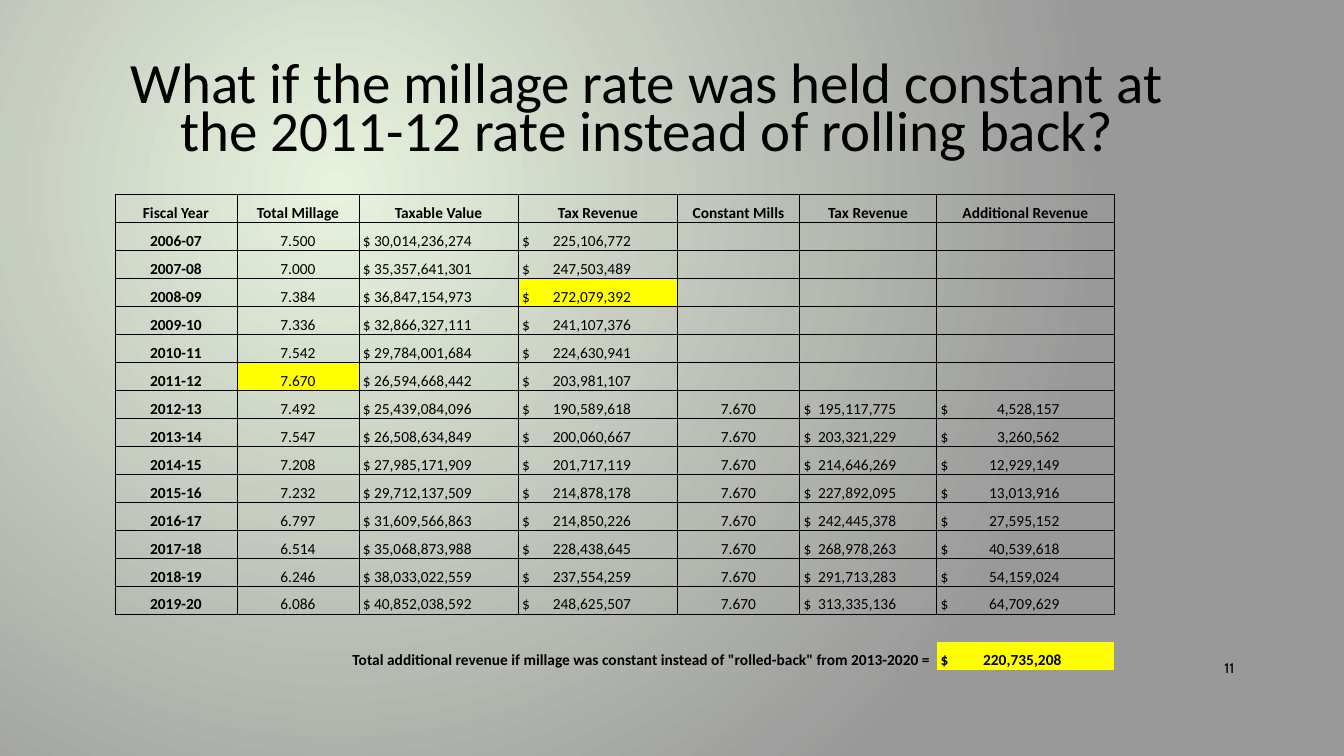
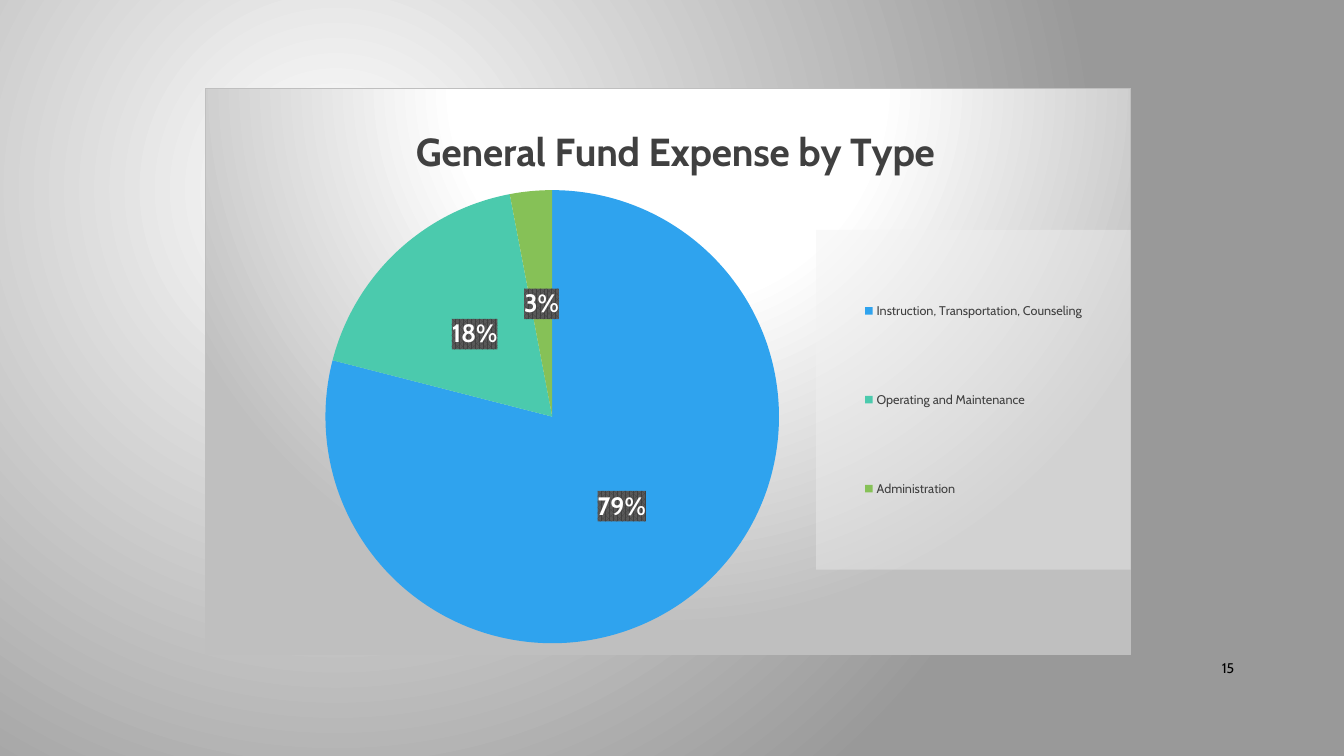
from lxml.etree import fromstring
from pptx import Presentation
from pptx.chart.data import CategoryChartData
from pptx.dml.color import RGBColor
from pptx.enum.chart import XL_CHART_TYPE as ChartType
from pptx.enum.chart import XL_LABEL_POSITION as LabelPosition
from pptx.enum.chart import XL_LEGEND_POSITION as LegendPosition
from pptx.enum.text import MSO_ANCHOR as Anchor
from pptx.enum.text import PP_ALIGN as Align
from pptx.oxml.ns import nsdecls, qn
from pptx.util import Inches, Pt

SLIDE_W, SLIDE_H = 13.33, 7.5
BLACK, WHITE, DARK, YELLOW = "000000", "FFFFFF", "404040", "FFFF00"
EDGE, CHART_GREY = "999999", "BFBFBF"
BODY_FONT, TABLE_FONT = "Cabin", "Calibri"
NO_STYLE = "{2D5ABB26-0587-4C30-8999-92F81FD0307C}"

COLUMN_WIDTHS = [1.21, 1.21, 1.58, 1.58, 1.21, 1.36, 1.76]
ROW_HEIGHT = 4.72 / 17
CELL_INSET, MONEY_INSET = 0.01, 0.04
MONEY_TABS = {2: 1.08, 3: 1.08, 5: 0.92, 6: 1.18}  # right edge of the amounts
HEADINGS = ["Fiscal Year", "Total Millage", "Taxable Value", "Tax Revenue",
            "Constant Mills", "Tax Revenue", "Additional Revenue"]
YEARS = [
    ("2006-07", "7.500", "30,014,236,274", "225,106,772"),
    ("2007-08", "7.000", "35,357,641,301", "247,503,489"),
    ("2008-09", "7.384", "36,847,154,973", "272,079,392"),
    ("2009-10", "7.336", "32,866,327,111", "241,107,376"),
    ("2010-11", "7.542", "29,784,001,684", "224,630,941"),
    ("2011-12", "7.670", "26,594,668,442", "203,981,107"),
    ("2012-13", "7.492", "25,439,084,096", "190,589,618", "7.670", "195,117,775", "4,528,157"),
    ("2013-14", "7.547", "26,508,634,849", "200,060,667", "7.670", "203,321,229", "3,260,562"),
    ("2014-15", "7.208", "27,985,171,909", "201,717,119", "7.670", "214,646,269", "12,929,149"),
    ("2015-16", "7.232", "29,712,137,509", "214,878,178", "7.670", "227,892,095", "13,013,916"),
    ("2016-17", "6.797", "31,609,566,863", "214,850,226", "7.670", "242,445,378", "27,595,152"),
    ("2017-18", "6.514", "35,068,873,988", "228,438,645", "7.670", "268,978,263", "40,539,618"),
    ("2018-19", "6.246", "38,033,022,559", "237,554,259", "7.670", "291,713,283", "54,159,024"),
    ("2019-20", "6.086", "40,852,038,592", "248,625,507", "7.670", "313,335,136", "64,709,629"),
]
HIGHLIGHTS = {("2008-09", 3), ("2011-12", 1)}
TOTAL_LABEL = ('Total additional revenue if millage was constant '
               'instead of "rolled-back" from 2013-2020 =')
TOTAL = "220,735,208"

EXPENSES = [("Instruction, Transportation, Counseling", 79, "2FA3EE"),
            ("Operating and Maintenance", 18, "4BCAAD"),
            ("Administration", 3, "86C157")]


def color(hex_code):
    return RGBColor.from_string(hex_code)


def xml(tag, inner="", attributes=""):
    return fromstring(f'<{tag} {nsdecls("a", "c")} {attributes}>{inner}</{tag}>')


def solid(hex_code, alpha=100):
    return (f'<a:solidFill><a:srgbClr val="{hex_code}">'
            f'<a:alpha val="{alpha * 1000}"/></a:srgbClr></a:solidFill>')


def radial(stops, focus):
    """Circular gradient; focus is the left, top, right, bottom inset in percent."""
    colors = "".join(f'<a:gs pos="{pos * 1000}"><a:srgbClr val="{code}"/></a:gs>'
                     for pos, code in stops)
    sides = " ".join(f'{side}="{inset * 1000}"' for side, inset in zip("ltrb", focus))
    return (f'<a:gradFill rotWithShape="1"><a:gsLst>{colors}</a:gsLst>'
            f'<a:path path="circle"><a:fillToRect {sides}/></a:path></a:gradFill>')


def style(font, size, face, code=BLACK, bold=False):
    font.size, font.name, font.bold = Pt(size), face, bold
    font.color.rgb = color(code)


def add_text(slide, box, text, size, face, align, spacing=None):
    frame = slide.shapes.add_textbox(*map(Inches, box)).text_frame
    frame.word_wrap = True
    frame.vertical_anchor = Anchor.MIDDLE
    paragraph = frame.paragraphs[0]
    paragraph.alignment = align
    if spacing:
        paragraph.line_spacing = spacing
    run = paragraph.add_run()
    run.text = text
    style(run.font, size, face)


def add_page(deck, center, number):
    """Blank slide with the shared background glow and page number."""
    slide = deck.slides.add_slide(deck.slide_layouts[6])
    slide.background.fill.solid()
    plain = slide._element.find(".//" + qn("a:solidFill"))
    glow = radial([(0, center), (100, EDGE)], (50, 50, 100, 100))
    plain.getparent().replace(plain, xml("a:wrap", glow)[0])
    add_text(slide, (11.5, 6.43, 0.84, 0.4), number, 10, BODY_FONT, Align.RIGHT)
    return slide


def add_borders(cell):
    properties = cell._tc.get_or_add_tcPr()
    for side in "LRTB":
        properties.append(xml(f"a:ln{side}", solid(BLACK), f'w="{Pt(0.5)}"'))


def fill_cell(cell, text="", align=Align.CENTER, bold=False, tab=None, highlight=None):
    """Write one cell; with a tab, the text is an amount after a dollar sign."""
    cell.vertical_anchor = Anchor.BOTTOM
    cell.margin_left = Inches(MONEY_INSET if tab else CELL_INSET)
    cell.margin_right = Inches(0.06 if align == Align.RIGHT else CELL_INSET)
    cell.margin_top, cell.margin_bottom = Inches(CELL_INSET), 0
    if highlight:
        cell.fill.solid()
        cell.fill.fore_color.rgb = color(highlight)
    else:
        cell.fill.background()
    paragraph = cell.text_frame.paragraphs[0]
    if not text:
        paragraph._p.append(xml("a:endParaRPr", attributes='sz="1100"'))
        return
    paragraph.alignment = Align.LEFT if tab else align
    if tab:
        stop = f'<a:tab pos="{Inches(tab)}" algn="r"/>'
        paragraph._p.get_or_add_pPr().append(xml("a:tabLst", stop))
        text = f"$\t{text}"
    run = paragraph.add_run()
    run.text = text
    style(run.font, 11, TABLE_FONT, bold=bold)


def add_millage_table(slide):
    count = len(YEARS) + 3
    frame = slide.shapes.add_table(count, len(HEADINGS), Inches(1.14), Inches(1.93),
                                   Inches(sum(COLUMN_WIDTHS)), Inches(ROW_HEIGHT * count))
    table = frame.table
    table.first_row = table.horz_banding = False
    table._tbl.tblPr.find(qn("a:tableStyleId")).text = NO_STYLE
    for column, width in zip(table.columns, COLUMN_WIDTHS):
        column.width = Inches(width)
    for row in table.rows:
        row.height = Inches(ROW_HEIGHT)

    for c, heading in enumerate(HEADINGS):
        add_borders(table.cell(0, c))
        fill_cell(table.cell(0, c), heading, bold=True)
        fill_cell(table.cell(count - 2, c))
        for r, year in enumerate(YEARS, start=1):
            add_borders(table.cell(r, c))
            fill_cell(table.cell(r, c), year[c] if c < len(year) else "",
                      bold=c == 0, tab=MONEY_TABS.get(c),
                      highlight=YELLOW if (year[0], c) in HIGHLIGHTS else None)

    last = count - 1
    table.cell(last, 0).merge(table.cell(last, 5))
    fill_cell(table.cell(last, 0), TOTAL_LABEL, Align.RIGHT, bold=True)
    fill_cell(table.cell(last, 6), TOTAL, bold=True, tab=1.2, highlight=YELLOW)


def place(part, index, **shares):
    """Set a chart part's position as shares of the chart's size."""
    for old in part.findall(qn("c:layout")):
        part.remove(old)
    target = '<c:layoutTarget val="inner"/>' if part.tag == qn("c:plotArea") else ""
    modes = "".join(f'<c:{key}Mode val="edge"/>' for key in "xy")
    values = "".join(f'<c:{key} val="{share}"/>' for key, share in shares.items())
    part.insert(index, xml("c:layout",
                           f"<c:manualLayout>{target}{modes}{values}</c:manualLayout>"))


def add_expense_pie(slide):
    data = CategoryChartData()
    data.categories = [name for name, _, _ in EXPENSES]
    data.add_series("Series 1", [share for _, share, _ in EXPENSES])
    chart = slide.shapes.add_chart(ChartType.PIE, Inches(2.03), Inches(0.87),
                                   Inches(9.19), Inches(5.63), data).chart
    style(chart.font, 10, BODY_FONT)
    space = chart._chartSpace
    backdrop = radial([(0, WHITE), (39, WHITE), (100, CHART_GREY)], (50, -80, 50, 180))
    border = f'<a:ln w="{Pt(0.75)}">{solid(CHART_GREY)}</a:ln>'
    space.chart.addnext(xml("c:spPr", backdrop + border))

    run = chart.chart_title.text_frame.paragraphs[0].add_run()
    run.text = "General Fund Expense by Type"
    style(run.font, 28, BODY_FONT, DARK, bold=True)
    place(space.chart.find(qn("c:title")), 1, x=0.22, y=0.05)

    plot = chart.plots[0]
    plot.vary_by_categories = True
    place(space.chart.plotArea, 0, x=0.13, y=0.18, w=0.49, h=0.8)
    for i, (_, _, code) in enumerate(EXPENSES):
        slice_fill = plot.series[0].points[i].format.fill
        slice_fill.solid()
        slice_fill.fore_color.rgb = color(code)

    plot.has_data_labels = True
    labels = plot.data_labels
    labels.show_percentage, labels.show_value = True, False
    labels.number_format, labels.number_format_is_linked = "0%", False
    labels.position = LabelPosition.CENTER
    style(labels.font, 18, BODY_FONT, WHITE, bold=True)
    pattern = (f'<a:pattFill prst="pct75"><a:fgClr><a:srgbClr val="{DARK}"/></a:fgClr>'
               '<a:bgClr><a:srgbClr val="595959"/></a:bgClr></a:pattFill>')
    labels._element.find(qn("c:txPr")).addprevious(xml("c:spPr", pattern))

    chart.has_legend = True
    legend = chart.legend
    legend.position = LegendPosition.RIGHT
    legend.include_in_layout = False
    style(legend.font, 9, BODY_FONT, DARK)
    place(legend._element, 1, x=0.66, y=0.25, w=0.34, h=0.6)
    legend._element.find(qn("c:txPr")).addprevious(xml("c:spPr", solid("F2F2F2", 39)))


def main():
    deck = Presentation()
    deck.slide_width, deck.slide_height = Inches(SLIDE_W), Inches(SLIDE_H)

    millage = add_page(deck, "E7F3DD", "11")
    add_text(millage, (0.89, 0.54, 11.05, 1.17),
             "What if the millage rate was held constant at the 2011-12 rate "
             "instead of rolling back?", 40.7, TABLE_FONT, Align.CENTER, spacing=0.7)
    add_millage_table(millage)

    expenses = add_page(deck, WHITE, "15")
    add_expense_pie(expenses)
    deck.save("out.pptx")


if __name__ == "__main__":
    main()
